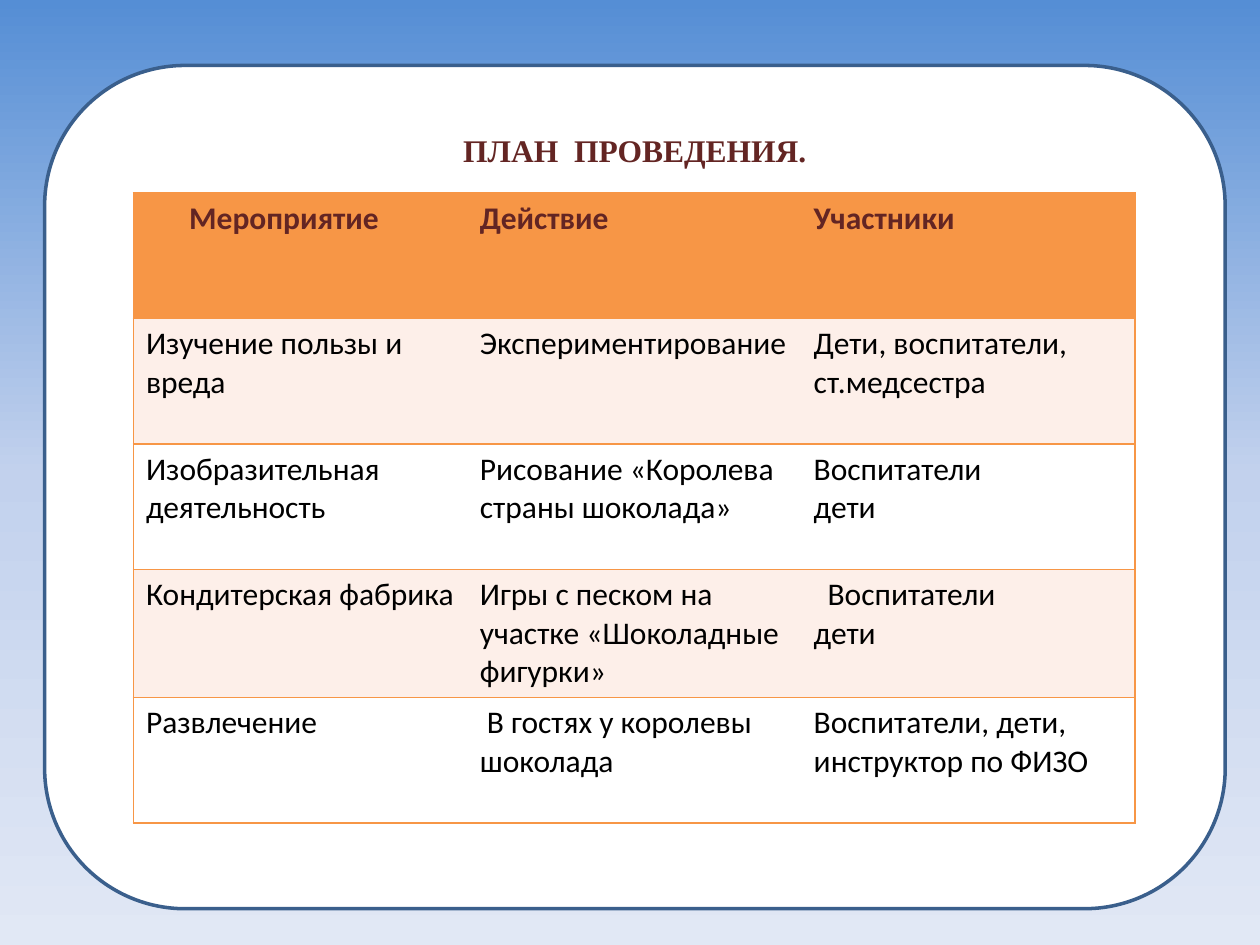
from copy import deepcopy
from dataclasses import dataclass

from lxml import etree
from pptx import Presentation
from pptx import util as u
from pptx.dml import color
from pptx.enum import shapes, text
from pptx.oxml import ns

ORANGE = "F79646"
MAROON = "632523"
PEACH = "FDEFE9"
WHITE = "FFFFFF"
BLACK = "000000"


@dataclass
class Entry:
    lines: tuple[str, ...]
    first_indent: float = 0


ROWS = [
    [Entry(("Мероприятие",), 0.87), Entry(("Действие",)), Entry(("Участники",))],
    [
        Entry(("Изучение пользы и вреда",)),
        Entry(("Экспериментирование",)),
        Entry(("Дети, воспитатели, ст.медсестра",)),
    ],
    [
        Entry(("Изобразительная", "деятельность")),
        Entry(("Рисование «Королева страны шоколада»",)),
        Entry(("Воспитатели", "дети")),
    ],
    [
        Entry(("Кондитерская фабрика",)),
        Entry(("Игры с песком на участке «Шоколадные фигурки»",)),
        Entry(("Воспитатели", "дети"), 0.28),
    ],
    [
        Entry(("Развлечение",)),
        Entry(("В гостях у королевы шоколада",), 0.14),
        Entry(("Воспитатели, дети, инструктор по ФИЗО",)),
    ],
]


def rgb(value: str) -> color.RGBColor:
    return color.RGBColor.from_string(value)


def paint(target, value: str) -> None:
    target.fill.solid()
    target.fill.fore_color.rgb = rgb(value)


def add_span(para, words: str, font: str, value: str, bold: bool) -> None:
    span = para.add_run()
    span.text = words
    span.font.name = font
    span.font.size = u.Pt(18)
    span.font.bold = bold
    span.font.color.rgb = rgb(value)


def set_background(page) -> None:
    fill = page.background.fill
    fill.gradient()
    fill.gradient_angle = 270
    stop_list = page.element.find(".//" + ns.qn("a:gsLst"))
    stop_list.append(deepcopy(stop_list[-1]))
    stops = [(0, "558ED5"), (0.5, "C2D1ED"), (1, "E1E8F5")]
    for stop, (position, value) in zip(fill.gradient_stops, stops):
        stop.position = position
        stop.color.rgb = rgb(value)


def add_panel(page) -> None:
    panel = page.shapes.add_shape(
        shapes.MSO_SHAPE.ROUNDED_RECTANGLE,
        u.Cm(0.9), u.Cm(1.32), u.Cm(23.8), u.Cm(17),
    )
    panel.shadow.inherit = False
    paint(panel, WHITE)
    panel.line.color.rgb = rgb("3A5F8C")
    panel.line.width = u.Pt(2)
    frame = panel.text_frame
    frame.word_wrap = True
    frame.vertical_anchor = text.MSO_ANCHOR.TOP
    frame.margin_top = u.Cm(0.5)
    para = frame.paragraphs[0]
    para.alignment = text.PP_ALIGN.CENTER
    add_span(para, "ПЛАН  ПРОВЕДЕНИЯ.", "Times New Roman", MAROON, True)


def add_border(cell, side: str, visible: bool) -> None:
    properties = cell._tc.get_or_add_tcPr()
    line = etree.SubElement(properties, ns.qn(f"a:ln{side}"), w=str(u.Pt(1)))
    if visible:
        fill = etree.SubElement(line, ns.qn("a:solidFill"))
        etree.SubElement(fill, ns.qn("a:srgbClr"), val=ORANGE)
    else:
        etree.SubElement(line, ns.qn("a:noFill"))


def fill_cell(cell, entry: Entry, row: int, column: int) -> None:
    header = row == 0
    visible = {"L": column == 0, "R": column == 2, "T": True, "B": True}
    for side, shown in visible.items():
        add_border(cell, side, shown)
    paint(cell, ORANGE if header else PEACH if row % 2 else WHITE)
    frame = cell.text_frame
    for index, words in enumerate(entry.lines):
        para = frame.add_paragraph() if index else frame.paragraphs[0]
        if entry.first_indent and index == 0:
            indent = u.Cm(entry.first_indent)
            para._p.get_or_add_pPr().set("indent", str(indent))
        add_span(para, words, "Calibri", MAROON if header else BLACK, header)


def add_plan(page) -> None:
    width, height = u.Cm(6.73), u.Cm(2.53)
    plan = page.shapes.add_table(
        len(ROWS), 3, u.Cm(2.69), u.Cm(3.89), width * 3, height * len(ROWS)
    ).table
    for row, entries in enumerate(ROWS):
        for column, entry in enumerate(entries):
            fill_cell(plan.cell(row, column), entry, row, column)


def main() -> None:
    deck = Presentation()
    deck.slide_width = u.Cm(25.4)
    deck.slide_height = u.Cm(19.05)
    page = deck.slides.add_slide(deck.slide_layouts[6])
    set_background(page)
    add_panel(page)
    add_plan(page)
    deck.save("out.pptx")


if __name__ == "__main__":
    main()
